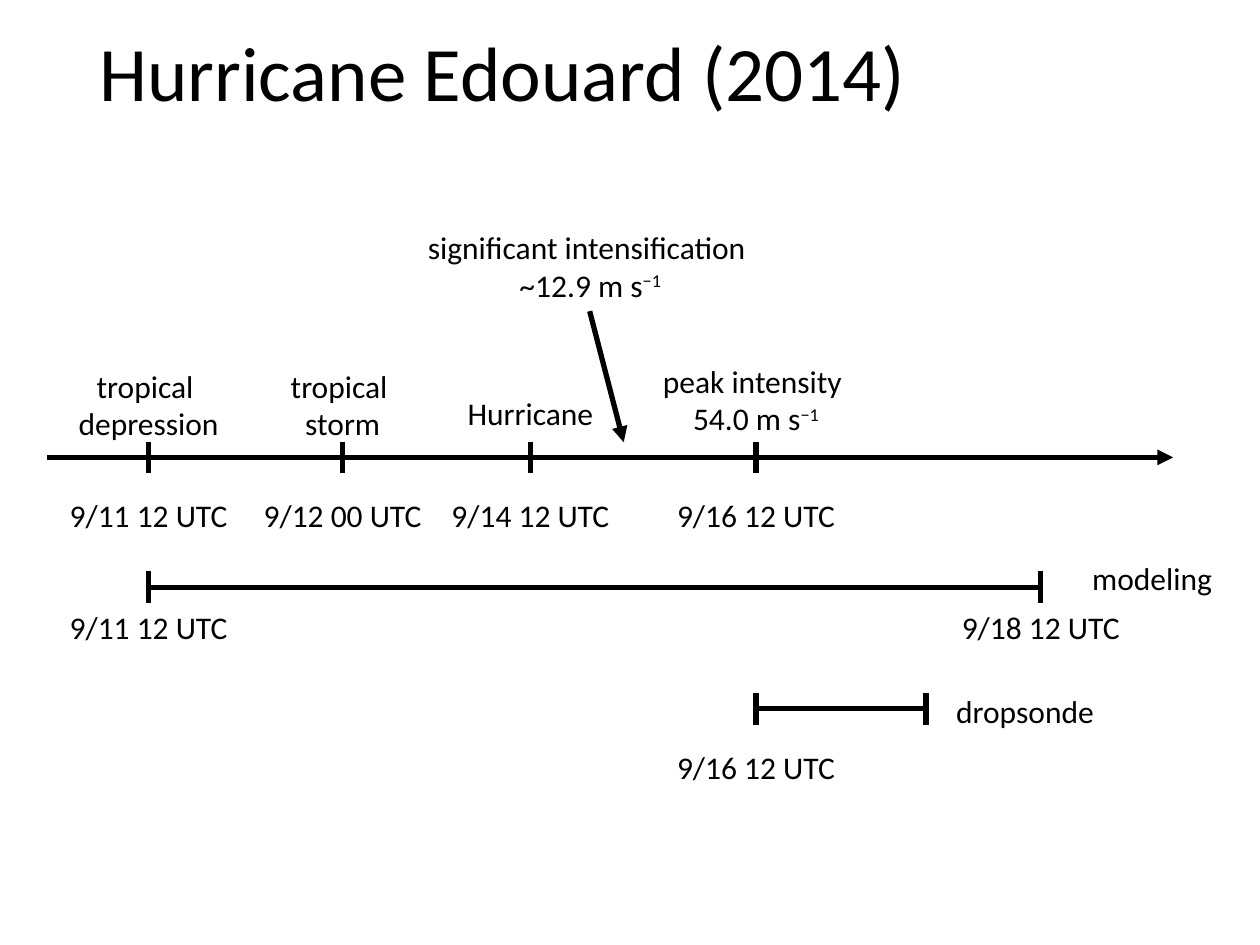
"""Build a timeline slide of Hurricane Edouard on a grid of 100 columns by 75 rows."""
import lxml.etree
import pptx
import pptx.dml.color
import pptx.enum.shapes
import pptx.enum.text
import pptx.oxml.ns
import pptx.util

TITLE = "Hurricane Edouard (2014)"
FONT = "Calibri"
COLORS = {"ink": "000000", "paper": "FFFFFF"}
COLUMNS, ROWS = 100, 75

STAGES = [
    {"column": 11.8, "text": "tropical \ndepression", "date": "9/11 12 UTC", "top": 28.6, "width": 13.3},
    {"column": 27.2, "text": "tropical \nstorm", "date": "9/12 00 UTC", "top": 28.6, "width": 10.4},
    {"column": 42.1, "text": "Hurricane", "date": "9/14 12 UTC", "top": 30.8, "width": 12.1},
    {"column": 60, "text": "peak intensity \n54.0 m s", "power": "−1", "date": "9/16 12 UTC", "top": 28.2, "width": 17},
]
PERIODS = [
    {"name": "modeling", "row": 46.6, "ends": (11.8, 82.6), "dates": ("9/11 12 UTC", "9/18 12 UTC"),
     "date_top": 47.8, "name_at": (85.7, 43.9), "name_width": 11.6},
    {"name": "dropsonde", "row": 56.25, "ends": (60, 73.5), "dates": ("9/16 12 UTC",),
     "date_top": 58.9, "name_at": (74.9, 54.4), "name_width": 13.1},
]
AXIS = {"row": 36.3, "ends": (3.7, 93.1), "date_top": 38.9}
CALLOUT = {"text": "significant intensification \n~12.9 m s", "power": "−1", "at": (31.7, 17.6), "width": 30.3}
CALLOUT_ARROW = ((46.8, 24.7), (49.5, 35.1))
TICK_HEIGHT, DATE_WIDTH, LINE_HEIGHT = 2.5, 14.7, 3.1

presentation = pptx.Presentation()
presentation.slide_width = pptx.util.Inches(10)
presentation.slide_height = pptx.util.Inches(7.5)
slide = presentation.slides.add_slide(presentation.slide_layouts[6])


def color(name):
    return pptx.dml.color.RGBColor.from_string(COLORS[name])


def across(columns):
    return round(presentation.slide_width * columns / COLUMNS)


def down(rows):
    return round(presentation.slide_height * rows / ROWS)


def add_text(text, left, top, width, height=None, size=18, power="", centered=False, wrap=False):
    height = height or 0.9 + LINE_HEIGHT * (text.count("\n") + 1)
    shape = slide.shapes.add_textbox(across(left), down(top), across(width), down(height))
    frame = shape.text_frame
    frame.word_wrap = wrap
    paragraph = frame.paragraphs[0]
    paragraph.text = text
    paragraph.font.name, paragraph.font.size = FONT, pptx.util.Pt(size)
    paragraph.font.color.rgb = color("ink")
    if centered:
        paragraph.alignment = pptx.enum.text.PP_ALIGN.CENTER
    if power:
        run = paragraph.add_run()
        run.text = power
        run.font._element.set("baseline", "30000")
    return frame


def add_line(start, end, arrow=False):
    connector = slide.shapes.add_connector(
        pptx.enum.shapes.MSO_CONNECTOR.STRAIGHT,
        across(start[0]), down(start[1]), across(end[0]), down(end[1]))
    connector.line.color.rgb = color("ink")
    connector.line.width = pptx.util.Pt(3)
    if arrow:
        lxml.etree.SubElement(connector.line._get_or_add_ln(), pptx.oxml.ns.qn("a:tailEnd"), type="triangle")
    lxml.etree.SubElement(connector._element.spPr, pptx.oxml.ns.qn("a:effectLst"))


def add_tick(column, row):
    add_line((column, row - TICK_HEIGHT / 2), (column, row + TICK_HEIGHT / 2))


def add_date(text, column, top):
    add_text(text, column - DATE_WIDTH / 2 + 0.1, top, DATE_WIDTH)


slide.background.fill.solid()
slide.background.fill.fore_color.rgb = color("paper")

title = add_text(TITLE, 6.9, 1.4, 86.2, 9.3, size=44, wrap=True)
title.vertical_anchor = pptx.enum.text.MSO_ANCHOR.MIDDLE
title.paragraphs[0].line_spacing = 0.9

add_line(*[(column, AXIS["row"]) for column in AXIS["ends"]], arrow=True)
for stage in STAGES:
    add_text(stage["text"], stage["column"] - stage["width"] / 2, stage["top"], stage["width"],
             power=stage.get("power", ""), centered=True)
    add_tick(stage["column"], AXIS["row"])
    add_date(stage["date"], stage["column"], AXIS["date_top"])

add_text(CALLOUT["text"], *CALLOUT["at"], CALLOUT["width"], power=CALLOUT["power"], centered=True, wrap=True)
add_line(*CALLOUT_ARROW, arrow=True)

for period in PERIODS:
    add_line(*[(column, period["row"]) for column in period["ends"]])
    for column in period["ends"]:
        add_tick(column, period["row"])
    for date, column in zip(period["dates"], period["ends"]):
        add_date(date, column, period["date_top"])
    add_text(period["name"], *period["name_at"], period["name_width"])

presentation.save("out.pptx")
